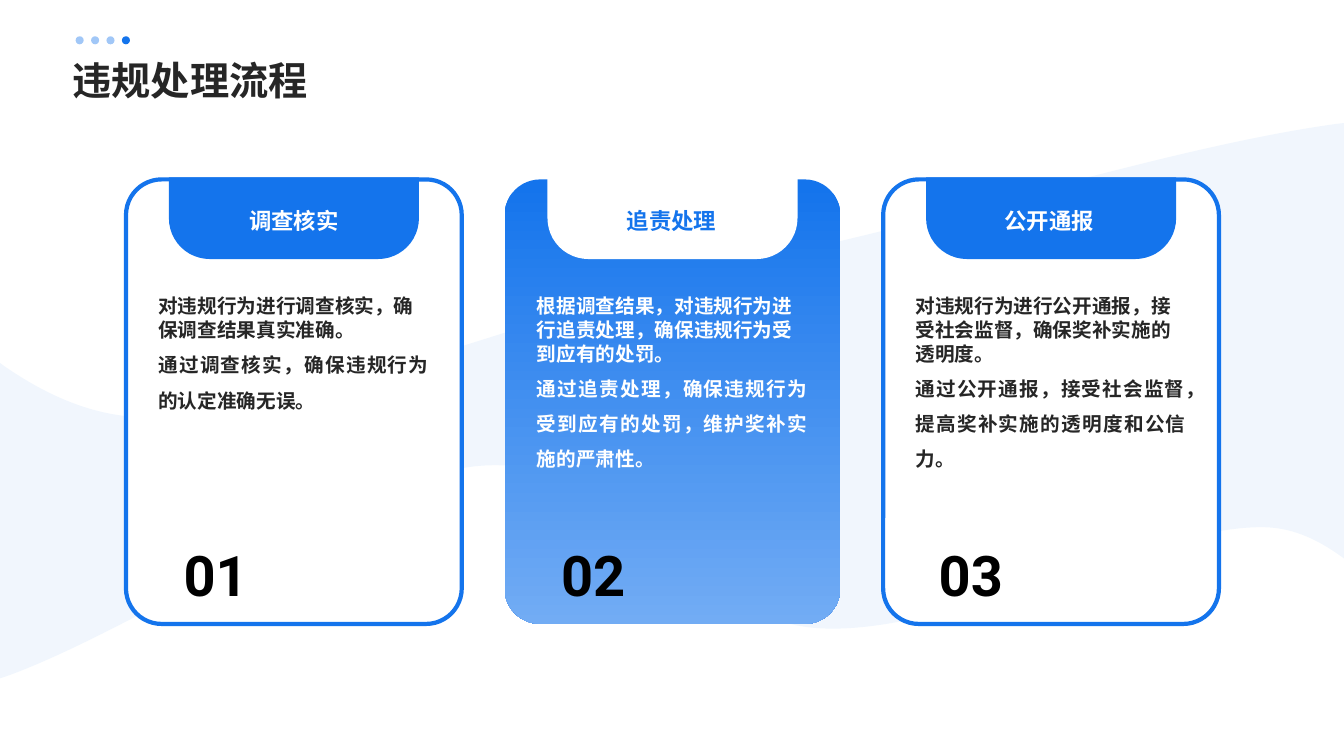
from lxml import etree
from pptx import Presentation
from pptx import util as u
from pptx.dml.color import RGBColor
from pptx.enum import shapes, text
from pptx.oxml.ns import qn

BLUE, PALE_BLUE, WHITE, INK, BLACK, RIM = "1474EC", "72ACF4", "FFFFFF", "262626", "000000", "BFE2FF"
CJK, LATIN = "Noto Sans CJK SC", "Roboto"
TITLE = "违规处理流程"
CARDS = [
    {"head": "调查核实", "filled": False,
     "body": ("对违规行为进行调查核实，确保调查结果真实准确。",
              "通过调查核实，确保违规行为的认定准确无误。")},
    {"head": "追责处理", "filled": True,
     "body": ("根据调查结果，对违规行为进行追责处理，确保违规行为受到应有的处罚。",
              "通过追责处理，确保违规行为受到应有的处罚，维护奖补实施的严肃性。")},
    {"head": "公开通报", "filled": False,
     "body": ("对违规行为进行公开通报，接受社会监督，确保奖补实施的透明度。",
              "通过公开通报，接受社会监督，提高奖补实施的透明度和公信力。")},
]
WAVE_UNIT = u.Inches(0.01)
WAVE_TOP = 122
WAVE_START = (1333, WAVE_TOP)
WAVE = [
    [(1333, 554)], [(1326, 549)],
    [(1304, 534), (1280, 523), (1252, 523)],
    [(1142, 522), (938, 633), (809, 623)],
    [(680, 613), (627, 452), (478, 462)],
    [(362, 470), (147, 619), (9, 670)],
    [(0, 673)], [(0, 360)], [(4, 363)],
    [(46, 392), (96, 416), (154, 414)],
    [(309, 409), (566, 296), (789, 249)],
    [(943, 217), (1165, 145), (1325, 123)],
]
CARD_LEFT, CARD_TOP, CARD_W, CARD_H, CARD_PITCH = 1.25, 1.78, 3.33, 4.41, 3.755
TAB_W, TAB_H, BODY_W, BODY_H = 2.48, 0.81, 2.68, 2.15
LABEL_LEFT, LABEL_PITCH, LABEL_W, LABEL_H = 1.82, 3.745, 2.19, 0.72
DOT, DOT_LEFT, DOT_TOP, DOT_PITCH, DOT_COUNT = 0.08, 0.75, 0.36, 0.153, 4
LEFT, CENTER, JUSTIFY = text.PP_ALIGN.LEFT, text.PP_ALIGN.CENTER, text.PP_ALIGN.JUSTIFY


def color(hex_value):
    return RGBColor.from_string(hex_value)


def paint(sp, fill, alpha=100):
    sp.shadow.inherit = False
    sp.line.fill.background()
    sp.fill.solid()
    sp.fill.fore_color.rgb = color(fill)
    if alpha < 100:
        clr = sp.fill._xPr.find(qn("a:solidFill"))[0]
        etree.SubElement(clr, qn("a:alpha")).set("val", str(alpha * 1000))


def add_shape(parent, kind, box, fill, alpha=100, adjust=()):
    sp = parent.add_shape(kind, *map(u.Inches, box))
    for i, value in enumerate(adjust):
        sp.adjustments[i] = value
    paint(sp, fill, alpha)
    return sp


def add_text(parent, box, paragraphs, size, ink, font=CJK, middle=True, rim=None):
    tf = parent.add_textbox(*map(u.Inches, box)).text_frame
    tf.word_wrap = True
    tf.margin_left = tf.margin_right = tf.margin_top = tf.margin_bottom = 0
    tf.vertical_anchor = text.MSO_ANCHOR.MIDDLE if middle else text.MSO_ANCHOR.TOP
    for i, (words, align, spacing) in enumerate(paragraphs):
        p = tf.add_paragraph() if i else tf.paragraphs[0]
        p.alignment, p.line_spacing = align, spacing
        r = p.add_run()
        r.text = words
        r.font.size, r.font.bold, r.font.name = u.Pt(size), True, font
        r.font.color.rgb = color(ink)
        rpr = r.font._element
        etree.SubElement(rpr, qn("a:ea")).set("typeface", font)
        if rim:
            ln = etree.Element(qn("a:ln"), w=str(u.Pt(1)))
            fill = etree.SubElement(ln, qn("a:solidFill"))
            etree.SubElement(fill, qn("a:srgbClr")).set("val", rim)
            rpr.insert(0, ln)


def add_wave(parent):
    builder = parent.build_freeform(*WAVE_START, scale=WAVE_UNIT)
    builder.add_line_segments([segment[-1] for segment in WAVE], close=True)
    sp = builder.convert_to_shape()
    paint(sp, BLUE, 6)
    lines = list(sp._element.iter(qn("a:lnTo")))
    for line, segment in zip(lines, WAVE):
        if len(segment) == 3:
            curve = etree.Element(qn("a:cubicBezTo"))
            for x, y in segment:
                etree.SubElement(curve, qn("a:pt"), x=str(x), y=str(y - WAVE_TOP))
            line.getparent().replace(line, curve)


def add_card(parent, index, card):
    left = CARD_LEFT + index * CARD_PITCH
    filled = card["filled"]
    sp = add_shape(parent, shapes.MSO_SHAPE.ROUNDED_RECTANGLE,
                   (left, CARD_TOP, CARD_W, CARD_H), WHITE, adjust=(0.106,))
    if filled:
        sp.fill.gradient()
        sp.fill.gradient_angle = 270
        for stop, place, shade in zip(sp.fill.gradient_stops, (0.01, 1), (BLUE, PALE_BLUE)):
            stop.position, stop.color.rgb = place, color(shade)
    else:
        sp.line.color.rgb, sp.line.width = color(BLUE), u.Pt(3)
    tab_fill, head_ink, body_ink = (WHITE, BLUE, WHITE) if filled else (BLUE, WHITE, INK)
    add_shape(parent, shapes.MSO_SHAPE.ROUND_2_SAME_RECTANGLE,
              (left + (CARD_W - TAB_W) / 2, CARD_TOP - 0.02, TAB_W, TAB_H),
              tab_fill, adjust=(0, 0.5))
    label_left = LABEL_LEFT + index * LABEL_PITCH
    add_text(parent, (label_left, 1.81, LABEL_W, LABEL_H),
             [(card["head"], CENTER, 1.1)], 16, head_ink)
    first, second = card["body"]
    add_text(parent, (left + 0.32, 2.92, BODY_W, BODY_H),
             [(first, LEFT, 1.0), (second, JUSTIFY, 1.5)], 14, body_ink, middle=False)
    add_text(parent, (label_left, 5.3, LABEL_W, LABEL_H),
             [(f"{index + 1:02}", JUSTIFY, 1.1)], 40, BLACK, LATIN, rim=RIM)


def main():
    prs = Presentation()
    prs.slide_width, prs.slide_height = u.Inches(13.33), u.Inches(7.5)
    s = prs.slides.add_slide(prs.slide_layouts[6])
    add_wave(s.shapes)
    for index, card in enumerate(CARDS):
        add_card(s.shapes, index, card)
    add_text(s.shapes, (0.72, 0.51, 11.88, 0.51), [(TITLE, JUSTIFY, 1.1)], 28, INK)
    dots = s.shapes.add_group_shape().shapes
    for i in reversed(range(DOT_COUNT)):
        add_shape(dots, shapes.MSO_SHAPE.OVAL, (DOT_LEFT + i * DOT_PITCH, DOT_TOP, DOT, DOT),
                  BLUE, 100 if i == DOT_COUNT - 1 else 40)
    prs.save("out.pptx")


if __name__ == "__main__":
    main()
